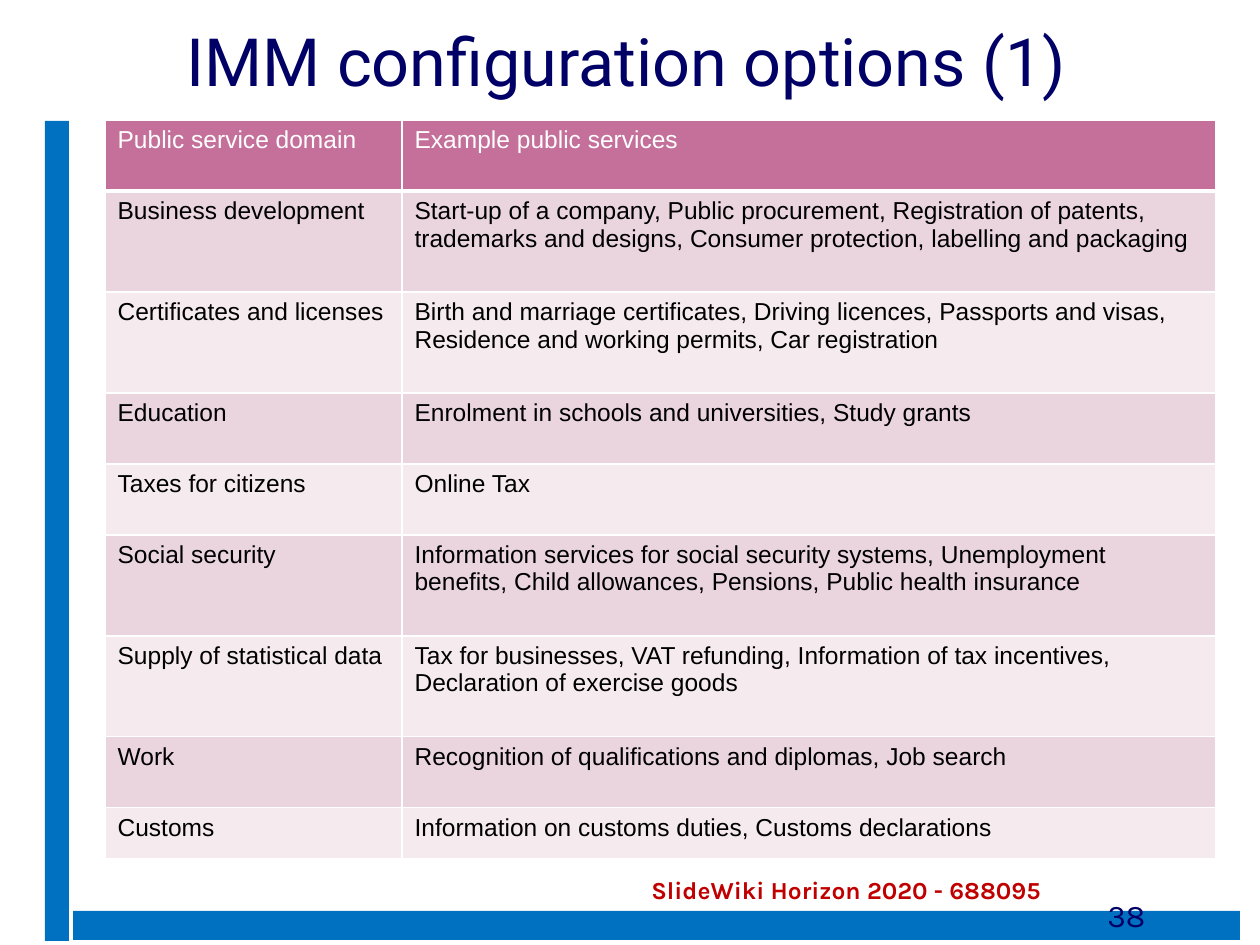
from lxml.etree import SubElement
from pptx import Presentation
from pptx.dml.color import RGBColor
from pptx.enum.shapes import MSO_SHAPE
from pptx.enum.text import MSO_ANCHOR
from pptx.oxml.ns import qn
from pptx.util import Pt

PX = 914400 // 126
NAVY = RGBColor(0x00, 0x00, 0x66)
BLUE = RGBColor(0x00, 0x70, 0xC0)
RED = RGBColor(0xC0, 0x00, 0x00)
WHITE = RGBColor(0xFF, 0xFF, 0xFF)
BLACK = RGBColor(0x00, 0x00, 0x00)
ROSE = RGBColor(0xC4, 0x70, 0x9A)
BANDS = [RGBColor(0xEA, 0xD5, 0xDE), RGBColor(0xF5, 0xEB, 0xEF)]

BARS = [(45, 121, 24, 820), (73, 911, 1167, 29)]
CAPTIONS = [
    ("SlideWiki Horizon 2020 -\u00a0688095", (639, 869, 529, 43), "Karla", 14, RED, True, MSO_ANCHOR.TOP),
    ("IMM configuration options (1)", (174, 16, 932, 90), "Roboto", 38, NAVY, False, MSO_ANCHOR.BOTTOM),
    ("38", (1095, 890, 165, 55), "Karla", 18, NAVY, False, MSO_ANCHOR.TOP),
]
SERVICES = [
    ("Public service domain", "Example public services", 71),
    ("Business development", "Start-up of a company, Public procurement, Registration of patents, "
     "trademarks and designs, Consumer protection, labelling and packaging", 101),
    ("Certificates and licenses", "Birth and marriage certificates, Driving licences, Passports and visas, "
     "Residence and working permits, Car registration", 101),
    ("Education", "Enrolment in schools and universities, Study grants", 71),
    ("Taxes for citizens", "Online Tax", 71),
    ("Social security", "Information services for social security systems, Unemployment benefits, "
     "Child allowances, Pensions, Public health insurance", 101),
    ("Supply of statistical data", "Tax for businesses, VAT refunding, Information of tax incentives, "
     "Declaration of exercise goods", 101),
    ("Work", "Recognition of qualifications and diplomas, Job search", 71),
    ("Customs", "Information on customs duties, Customs declarations", 51),
]
COLUMN_WIDTHS = [297, 814]
TABLE_LEFT, TABLE_TOP = 105, 120


def emu(lengths):
    return [length * PX for length in lengths]


def style(paragraph, face, size, color, bold=False):
    font = paragraph.font
    font.name, font.size, font.bold = face, Pt(size), bold
    font.color.rgb = color


def add_borders(cell, bottom_width):
    properties = cell._tc.get_or_add_tcPr()
    for side, width in (("L", 1), ("R", 1), ("T", 1), ("B", bottom_width)):
        line = SubElement(properties, qn(f"a:ln{side}"), w=str(Pt(width)))
        SubElement(SubElement(line, qn("a:solidFill")), qn("a:srgbClr"), val=str(WHITE))


def add_caption(slide, wording, box, face, size, color, bold, anchor):
    frame = slide.shapes.add_textbox(*emu(box)).text_frame
    frame.word_wrap = True
    frame.vertical_anchor = anchor
    frame.text = wording
    style(frame.paragraphs[0], face, size, color, bold)


def add_services(slide):
    height = sum(row[-1] for row in SERVICES)
    box = emu((TABLE_LEFT, TABLE_TOP, sum(COLUMN_WIDTHS), height))
    table = slide.shapes.add_table(len(SERVICES), len(COLUMN_WIDTHS), *box).table
    for column, width in zip(table.columns, COLUMN_WIDTHS):
        column.width = width * PX
    for index, (*wordings, row_height) in enumerate(SERVICES):
        header = index == 0
        table.rows[index].height = row_height * PX
        for cell, wording in zip(table.rows[index].cells, wordings):
            cell.text = wording
            style(cell.text_frame.paragraphs[0], "Arial", 14, WHITE if header else BLACK)
            add_borders(cell, 3 if header else 1)
            cell.fill.solid()
            cell.fill.fore_color.rgb = ROSE if header else BANDS[(index - 1) % 2]


def main():
    deck = Presentation()
    deck.slide_width, deck.slide_height = emu((1260, 945))
    slide = deck.slides.add_slide(deck.slide_layouts[6])
    for box in BARS:
        bar = slide.shapes.add_shape(MSO_SHAPE.RECTANGLE, *emu(box))
        bar.shadow.inherit = False
        bar.fill.solid()
        bar.fill.fore_color.rgb = BLUE
        bar.line.fill.background()
    add_services(slide)
    for caption in CAPTIONS:
        add_caption(slide, *caption)
    deck.save("out.pptx")


if __name__ == "__main__":
    main()
